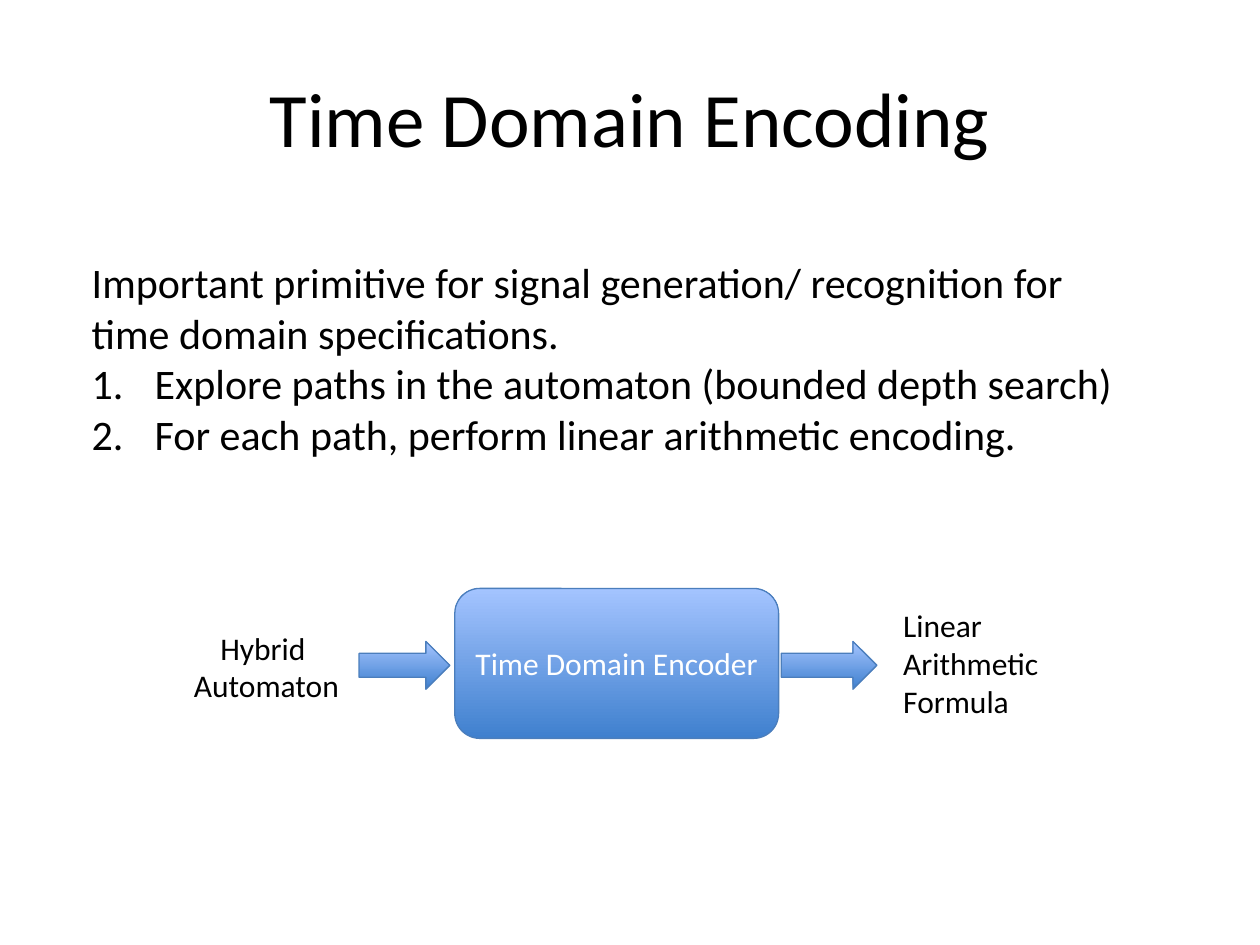
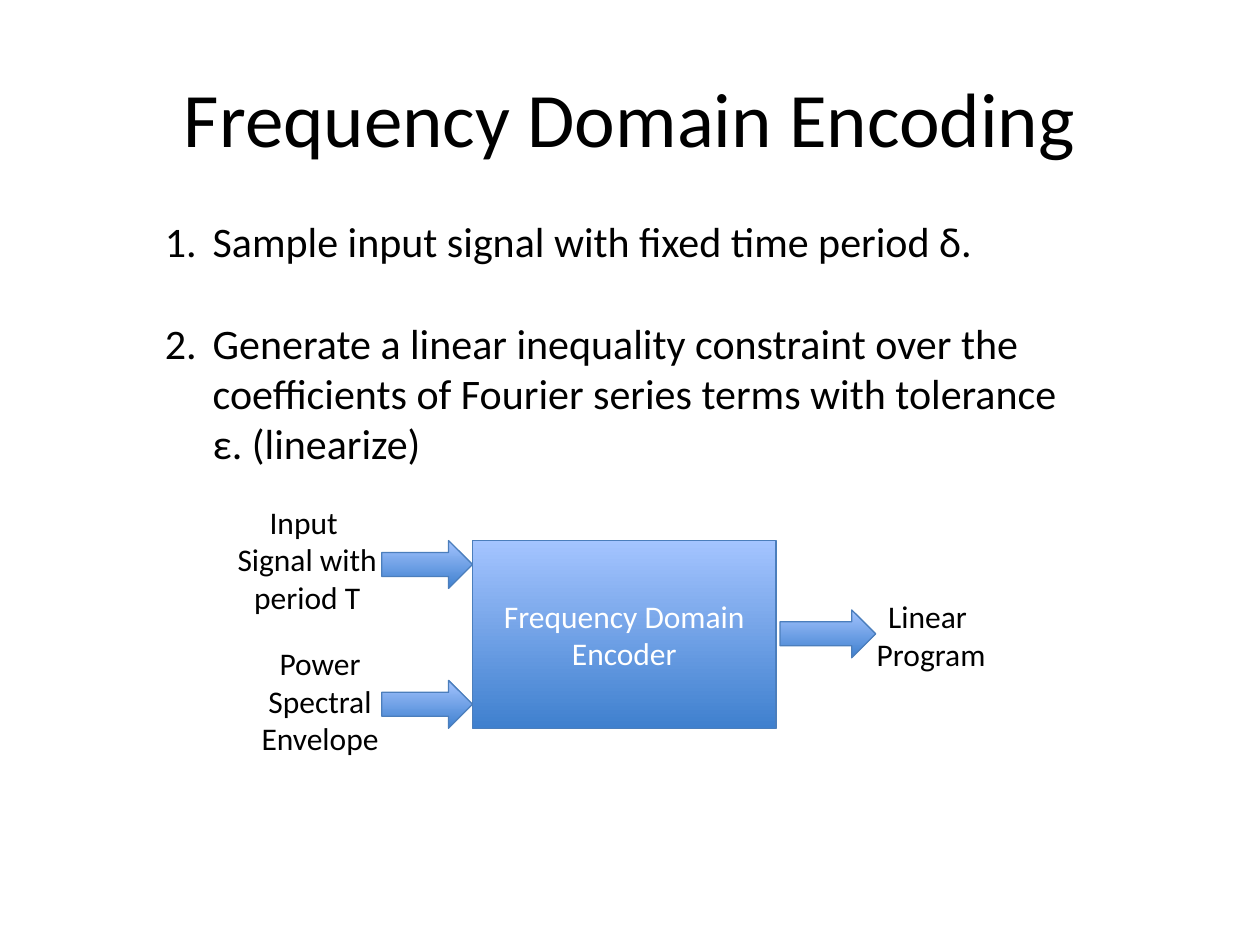
import pptx
import pptx.dml.color
import pptx.enum.shapes
import pptx.enum.text
import pptx.util
from lxml import etree

Inches, Pt = pptx.util.Inches, pptx.util.Pt
SHAPE = pptx.enum.shapes.MSO_SHAPE
ALIGN = pptx.enum.text.PP_ALIGN
ANCHOR = pptx.enum.text.MSO_ANCHOR

THEME = {
    "font": "Calibri",
    "ink": "000000", "inverse": "FFFFFF",
    "deep": "3F80CE", "light": "A4C4FF", "edge": "4B7EBC",
    "title": 44, "body": 24, "label": 18,
    "line": 0.75,
}
TITLE_AT = (0.5, 0.3, 9, 1.25)
ARROW_HEIGHT = 0.38
INPUT_ARROW, OUTPUT_ARROW = 0.72, 0.76

# Content: boxes are left, top, width, height; arrows are left, top, width
SLIDES = [
    {
        "title": "Time Domain Encoding",
        "body": {
            "at": (0.63, 1.99, 8.37, 1.72), "indent": 0.5, "gap": 0,
            "intro": ["Important primitive for signal generation/ recognition for "
                      "time domain specifications."],
            "steps": ["Explore paths in the automaton (bounded depth search)",
                      "For each path, perform linear arithmetic encoding."],
        },
        "encoder": ("Time Domain Encoder", SHAPE.ROUNDED_RECTANGLE, (3.61, 4.67, 2.57, 1.19)),
        "arrows": [(2.85, 5.09, INPUT_ARROW), (6.2, 5.09, OUTPUT_ARROW)],
        "labels": [
            (["Hybrid ", "Automaton"], (1.43, 4.94, 1.37, 0.71), ALIGN.CENTER, False),
            (["Linear", "Arithmetic", "Formula"], (7.07, 4.76, 1.29, 1.01), ALIGN.LEFT, False),
        ],
    },
    {
        "title": "Frequency Domain Encoding",
        "body": {
            "at": (1.21, 1.66, 7.45, 2.12), "indent": 0.38, "gap": 29.3,
            "intro": [],
            "steps": ["Sample input signal with fixed time period δ.",
                      "Generate a linear inequality constraint over the coefficients of "
                      "Fourier series terms with tolerance ε. (linearize)"],
        },
        "encoder": ("Frequency Domain Encoder", SHAPE.RECTANGLE, (3.75, 4.29, 2.41, 1.49)),
        "arrows": [(3.03, 4.29, INPUT_ARROW), (3.03, 5.4, INPUT_ARROW),
                   (6.19, 4.84, OUTPUT_ARROW)],
        "labels": [
            (["Input", " Signal with", " period T"], (1.72, 3.94, 1.38, 1.01), ALIGN.CENTER, False),
            (["Power Spectral Envelope"], (1.85, 5.06, 1.38, 1.01), ALIGN.CENTER, True),
            (["Linear ", "Program"], (6.85, 4.69, 1.08, 0.71), ALIGN.CENTER, False),
        ],
    },
]


def color(name):
    return pptx.dml.color.RGBColor.from_string(THEME[name])


def place(at):
    return [Inches(length) for length in at]


def write(frame, lines, size, align, ink="ink"):
    """Fill a text frame with one paragraph per line."""
    for index, line in enumerate(lines):
        para = frame.paragraphs[0] if index == 0 else frame.add_paragraph()
        para.alignment = align
        span = para.add_run()
        span.text = line
        span.font.name = THEME["font"]
        span.font.size = Pt(THEME[size])
        span.font.color.rgb = color(ink)


def add_text(page, lines, at, size, align, wrap=True, anchor=ANCHOR.TOP):
    frame = page.shapes.add_textbox(*place(at)).text_frame
    frame.word_wrap = wrap
    frame.vertical_anchor = anchor
    write(frame, lines, size, align)
    return frame


def number(para, indent):
    """Give a paragraph an automatic number and a hanging indent."""
    props = para._p.get_or_add_pPr()
    props.set("marL", str(Inches(indent)))
    props.set("indent", str(-Inches(indent)))
    bullet = etree.SubElement(props, pptx.oxml.ns.qn("a:buAutoNum"))
    bullet.set("type", "arabicPeriod")


def add_block(page, kind, at):
    """Add a shape with the shared vertical gradient, dark at the bottom."""
    block = page.shapes.add_shape(kind, *place(at))
    block.shadow.inherit = False
    block.fill.gradient()
    block.fill.gradient_angle = 90
    for stop, name in zip(block.fill.gradient_stops, ("deep", "light")):
        stop.color.rgb = color(name)
    block.line.color.rgb = color("edge")
    block.line.width = Pt(THEME["line"])
    return block


def add_body(page, body):
    lines = body["intro"] + body["steps"]
    frame = add_text(page, lines, body["at"], "body", ALIGN.LEFT)
    steps = frame.paragraphs[len(body["intro"]):]
    for para in steps[1:]:
        para.space_before = Pt(body["gap"])
    for para in steps:
        number(para, body["indent"])


def build_page(deck, content):
    page = deck.slides.add_slide(deck.slide_layouts[6])
    add_text(page, [content["title"]], TITLE_AT, "title", ALIGN.CENTER, anchor=ANCHOR.MIDDLE)
    add_body(page, content["body"])

    # Encoder diagram
    for left, top, width in content["arrows"]:
        add_block(page, SHAPE.RIGHT_ARROW, (left, top, width, ARROW_HEIGHT))
    for lines, at, align, wrap in content["labels"]:
        add_text(page, lines, at, "label", align, wrap)
    name, kind, at = content["encoder"]
    frame = add_block(page, kind, at).text_frame
    frame.word_wrap = True
    frame.vertical_anchor = ANCHOR.MIDDLE
    write(frame, [name], "label", ALIGN.CENTER, "inverse")


def main():
    deck = pptx.Presentation()
    deck.slide_width, deck.slide_height = Inches(10), Inches(7.5)
    for content in SLIDES:
        build_page(deck, content)
    deck.save("out.pptx")


if __name__ == "__main__":
    main()
